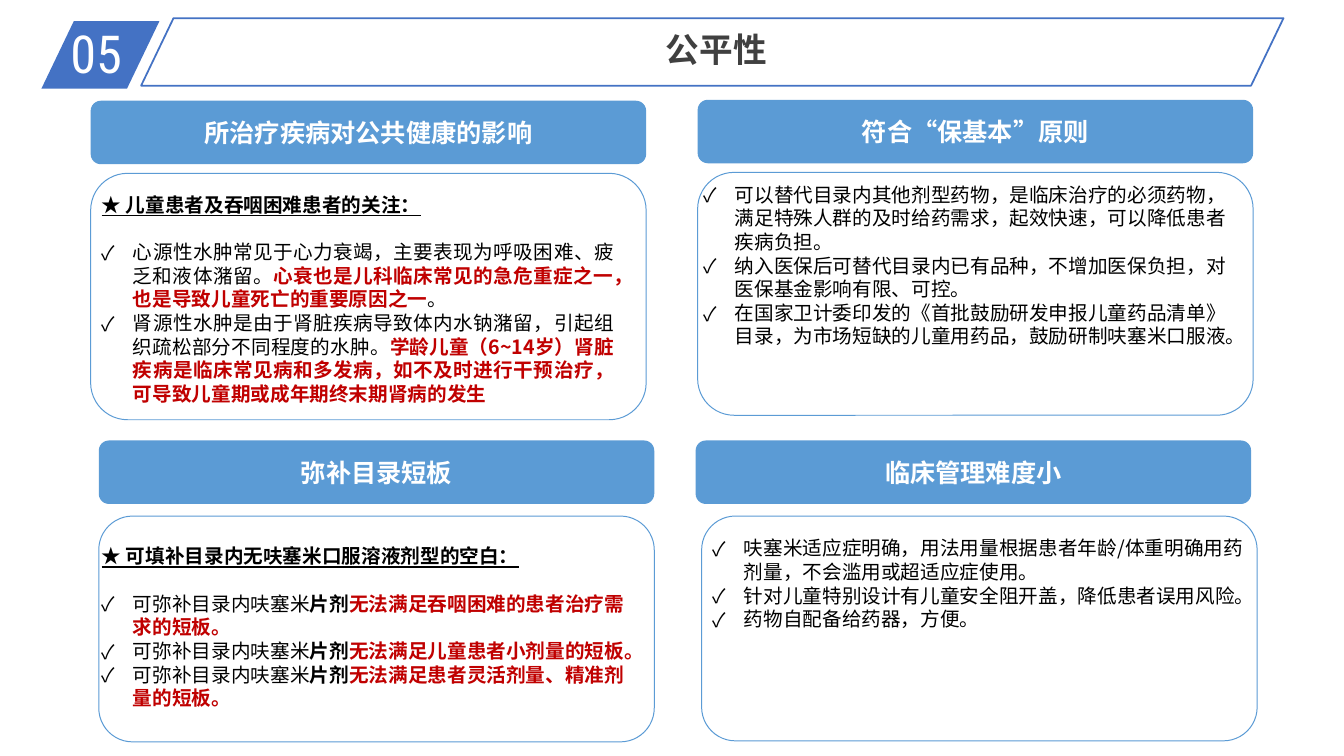
from dataclasses import dataclass

from lxml.etree import SubElement
from pptx import Presentation
from pptx.dml.color import RGBColor
from pptx.enum.shapes import MSO_SHAPE as Shape
from pptx.enum.text import MSO_ANCHOR as Anchor, PP_ALIGN as Align
from pptx.oxml.ns import qn
from pptx.util import Inches, Pt


@dataclass(frozen=True)
class Theme:
    blue: str = "4472C4"
    sky: str = "5B9BD5"
    white: str = "FFFFFF"
    grey: str = "404040"
    black: str = "000000"
    red: str = "C00000"
    text_font: str = "Noto Sans CJK SC"
    number_font: str = "Roboto Condensed"
    number_size: float = 37.4
    title_size: float = 24
    header_size: float = 18
    body_size: float = 14
    line_pitch: float = 16.9
    indent: float = 0.31


class Page:
    """One slide on a grid of 100 columns by 100 rows."""

    def __init__(self, deck, theme):
        self.deck, self.theme = deck, theme
        self.slide = deck.slides.add_slide(deck.slide_layouts[6])

    def place(self, left, top, width, height):
        column, row = self.deck.slide_width / 100, self.deck.slide_height / 100
        return [round(n) for n in (left * column, top * row, width * column, height * row)]

    def shape(self, kind, area, corner, fill=None, line=None, weight=1.0):
        shape = self.slide.shapes.add_shape(kind, *self.place(*area))
        shape.adjustments[0] = corner
        shape.shadow.inherit = False
        if fill:
            shape.fill.solid()
            shape.fill.fore_color.rgb = RGBColor.from_string(fill)
        else:
            shape.fill.background()
        if line:
            shape.line.color.rgb = RGBColor.from_string(line)
            shape.line.width = Pt(weight)
        else:
            shape.line.fill.background()
        return shape

    def text_box(self, area):
        frame = self.slide.shapes.add_textbox(*self.place(*area)).text_frame
        frame.word_wrap = True
        return frame

    def span(self, para, text, size, color, bold=False, underline=False, font=None):
        span = para.add_run()
        span.text = text
        style = span.font
        style.name = font or self.theme.text_font
        style.size, style.bold, style.underline = Pt(size), bold, underline
        style.color.rgb = RGBColor.from_string(color)
        SubElement(span._r.get_or_add_rPr(), qn("a:ea"), typeface=style.name)

    def label(self, area, text, size, color, bold=True, align=Align.CENTER, font=None):
        para = self.text_box(area).paragraphs[0]
        para.alignment = align
        self.span(para, text, size, color, bold, font=font)

    def panel(self, header, body, title):
        theme = self.theme
        bar = self.shape(Shape.ROUNDED_RECTANGLE, header, 0.16, fill=theme.sky)
        frame = bar.text_frame
        frame.margin_left = frame.margin_right = frame.margin_top = frame.margin_bottom = 0
        frame.vertical_anchor = Anchor.MIDDLE
        frame.paragraphs[0].alignment = Align.CENTER
        self.span(frame.paragraphs[0], title, theme.header_size, theme.white, True)
        self.shape(Shape.ROUNDED_RECTANGLE, body, 0.15, line=theme.sky, weight=0.72)

    def check_list(self, area, items, heading=None, align=Align.LEFT):
        theme = self.theme
        frame = self.text_box(area)
        rows = ([[(heading, "heading")]] if heading else []) + items
        for number, parts in enumerate(rows):
            para = frame.add_paragraph() if number else frame.paragraphs[0]
            para.alignment = align
            para.line_spacing = Pt(theme.line_pitch)
            is_heading = parts[0][1] == "heading"
            if is_heading:
                para.space_after = Pt(theme.line_pitch)
            else:
                self.check_mark(para)
            for text, tone in parts:
                color = theme.red if tone == "alert" else theme.black
                self.span(para, text, theme.body_size, color, tone != "plain", is_heading)

    def check_mark(self, para):
        properties = para._p.get_or_add_pPr()
        indent = Inches(self.theme.indent)
        properties.set("marL", str(indent))
        properties.set("indent", str(-indent))
        SubElement(properties, qn("a:buFont"), typeface=self.theme.text_font)
        SubElement(properties, qn("a:buChar"), char="✓")


def main():
    deck = Presentation()
    deck.slide_width, deck.slide_height = Inches(13.33), Inches(7.5)
    theme = Theme()
    page = Page(deck, theme)

    # Title band
    page.shape(Shape.PARALLELOGRAM, (3.08, 2.8, 8.78, 8.93), 0.48, fill=theme.blue)
    page.label((4.5, 2.13, 8.4, 9.73), "05", theme.number_size, theme.white,
               bold=False, align=Align.LEFT, font=theme.number_font)
    page.shape(Shape.PARALLELOGRAM, (10.5, 2.4, 85, 8.93), 0.48,
               line=theme.blue, weight=1.25)
    page.label((22.13, 3.2, 62.33, 6.67), "公平性", theme.title_size, theme.grey)

    # Panels: header left and top, body left, top and height, title
    width, header_height = 41.33, 8.4
    panels = [
        (6.75, 13.33, 6.75, 22.93, 32.6, "所治疗疾病对公共健康的影响"),
        (51.91, 13.2, 51.91, 22.8, 32.13, "符合“保基本”原则"),
        (7.35, 58.27, 7.35, 68.27, 29.87, "弥补目录短板"),
        (51.76, 58.27, 52.21, 68.27, 29.73, "临床管理难度小"),
    ]
    for left, top, body_left, body_top, body_height, title in panels:
        page.panel((left, top, width, header_height),
                   (body_left, body_top, width, body_height), title)

    # Public health
    page.check_list((6.83, 24.8, 39.6, 30), [
        [("心源性水肿常见于心力衰竭，主要表现为呼吸困难、疲乏和液体潴留。", "plain"),
         ("心衰也是儿科临床常见的急危重症之一，也是导致儿童死亡的重要原因之一", "alert"),
         ("。", "plain")],
        [("肾源性水肿是由于肾脏疾病导致体内水钠潴留，引起组织疏松部分不同程度的水肿。", "plain"),
         ("学龄儿童（6~14岁）肾脏疾病是临床常见病和多发病，如不及时进行干预治疗，"
          "可导致儿童期或成年期终末期肾病的发生", "alert")],
    ], heading="★ 儿童患者及吞咽困难患者的关注：", align=Align.JUSTIFY)

    # Basic cover
    page.check_list((51.61, 23.47, width, 24), [[(text, "plain")] for text in (
        "可以替代目录内其他剂型药物，是临床治疗的必须药物，满足特殊人群的及时给药需求，"
        "起效快速，可以降低患者疾病负担。",
        "纳入医保后可替代目录内已有品种，不增加医保负担，对医保基金影响有限、可控。",
        "在国家卫计委印发的《首批鼓励研发申报儿童药品清单》目录，"
        "为市场短缺的儿童用药品，鼓励研制呋塞米口服液。",
    )])

    # Gaps in the catalogue
    page.check_list((6.83, 71.33, width, 24), [
        [("可弥补目录内呋塞米", "plain"), ("片剂", "strong"), (f"无法满足{need}的短板。", "alert")]
        for need in ("吞咽困难的患者治疗需求", "儿童患者小剂量", "患者灵活剂量、精准剂量")
    ], heading="★ 可填补目录内无呋塞米口服溶液剂型的空白：")

    # Clinical management
    page.check_list((52.29, 70.27, width, 14), [[(text, "plain")] for text in (
        "呋塞米适应症明确，用法用量根据患者年龄/体重明确用药剂量，不会滥用或超适应症使用。",
        "针对儿童特别设计有儿童安全阻开盖，降低患者误用风险。",
        "药物自配备给药器，方便。",
    )])

    deck.save("out.pptx")


if __name__ == "__main__":
    main()
